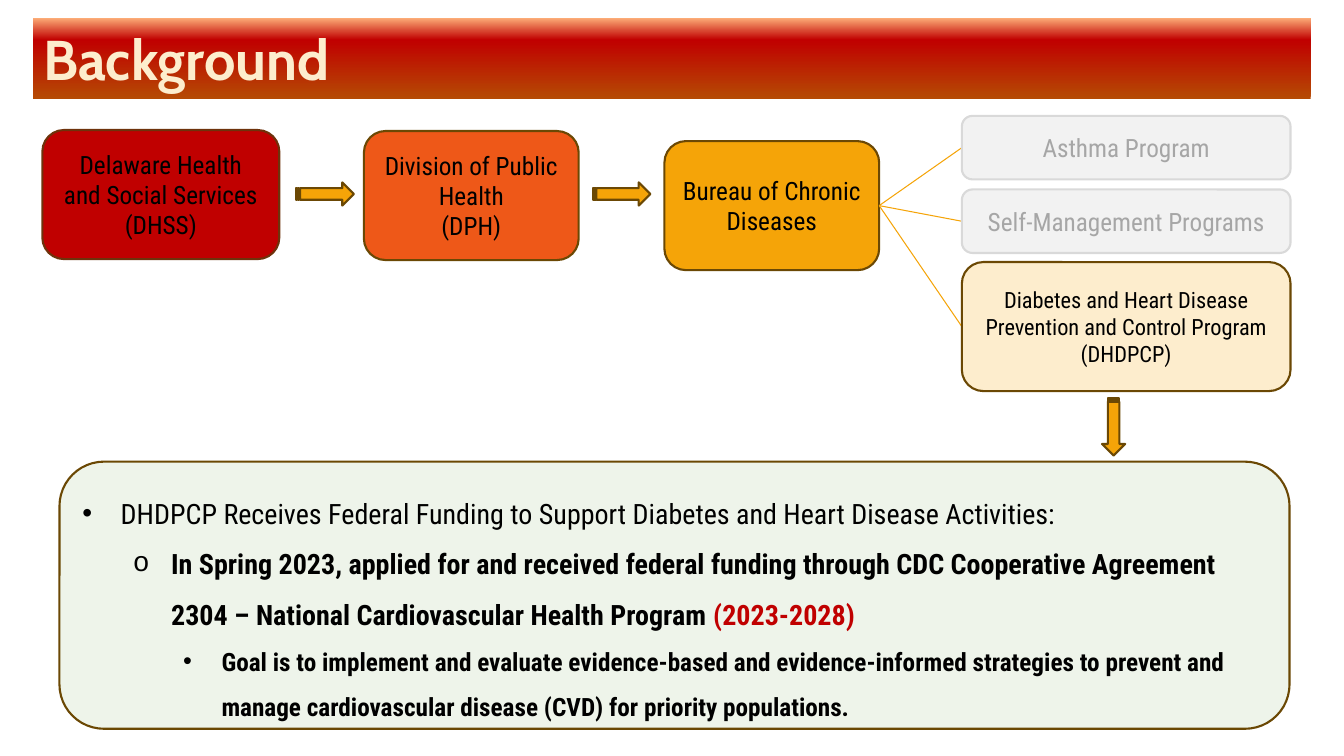
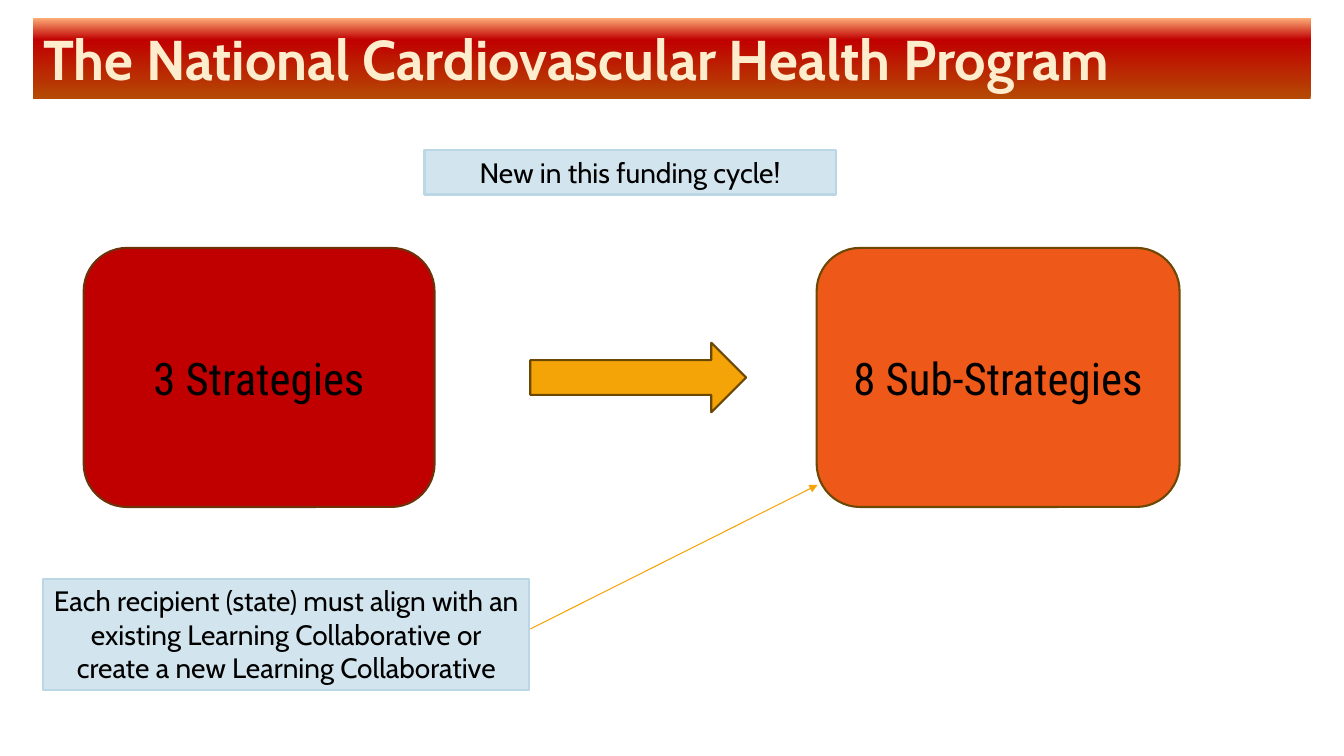
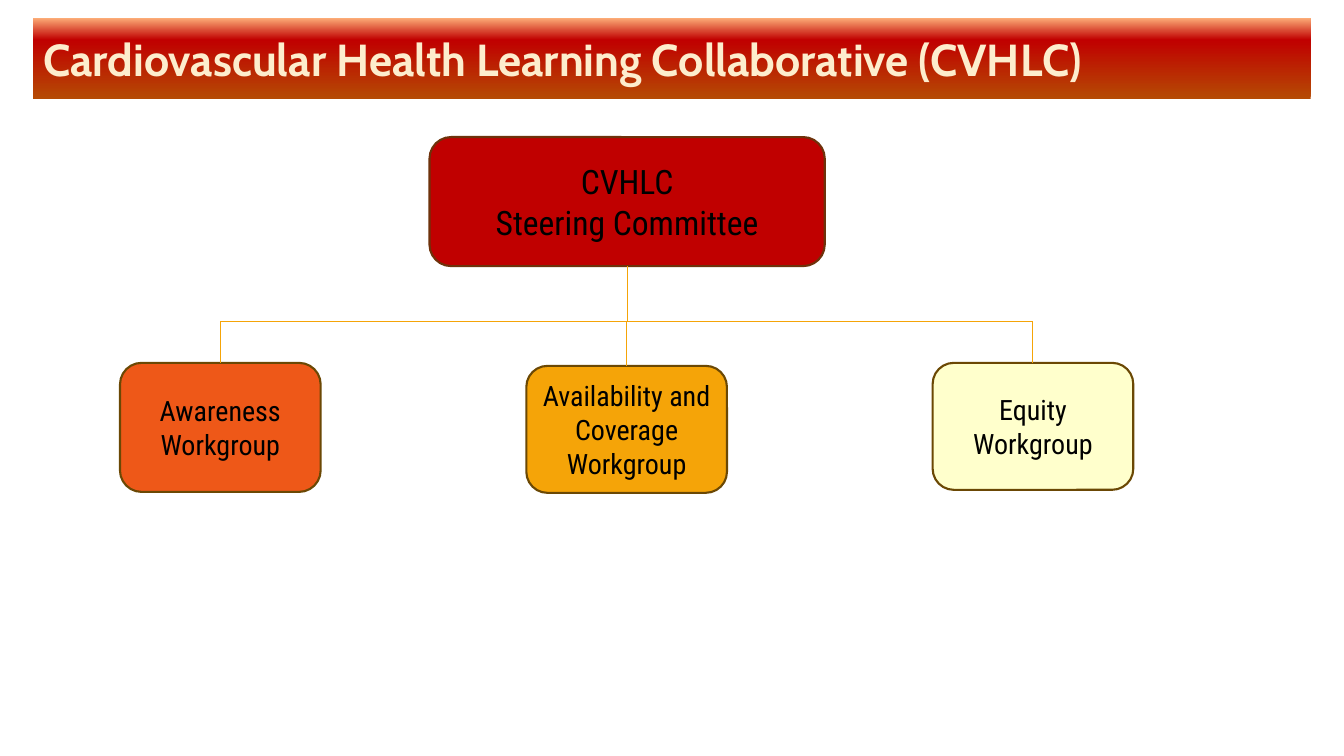
"""Build three slides on a state cardiovascular health program."""
from lxml.etree import SubElement
from pptx import Presentation
from pptx.dml.color import RGBColor
from pptx.enum.shapes import MSO_CONNECTOR, MSO_SHAPE
from pptx.enum.text import MSO_ANCHOR, PP_ALIGN
from pptx.oxml import parse_xml
from pptx.oxml.ns import nsdecls, qn
from pptx.util import Inches, Pt

RED = RGBColor(0xC0, 0x00, 0x00)
ORANGE = RGBColor(0xEE, 0x58, 0x18)
AMBER = RGBColor(0xF5, 0xA4, 0x08)
CREAM = RGBColor(0xFD, 0xED, 0xCD)
YELLOW = RGBColor(0xFF, 0xFF, 0xCC)
SAGE = RGBColor(0xEE, 0xF4, 0xEA)
PALE_BLUE = RGBColor(0xD2, 0xE4, 0xED)
BLUE_EDGE = RGBColor(0xBB, 0xD6, 0xE4)
PALE_GRAY = RGBColor(0xF2, 0xF2, 0xF2)
GRAY_EDGE = RGBColor(0xD9, 0xD9, 0xD9)
GRAY_TEXT = RGBColor(0xA6, 0xA6, 0xA6)
BROWN = RGBColor(0x6B, 0x48, 0x04)
RED_BROWN = RGBColor(0x6E, 0x32, 0x0B)
RUST = RGBColor(0xB5, 0x4A, 0x04)
PEACH = RGBColor(0xFC, 0xAB, 0x76)
BLACK = RGBColor(0x00, 0x00, 0x00)

HEADING_FONT = "Cabin"
BODY_FONT = "Roboto Condensed"
BAND = (0.33, 0.18, 12.67, 0.8)
BAND_STOPS = [(0, RUST), (73, RED), (100, PEACH)]

AGENCIES = [
    (["Delaware Health and Social Services (DHSS)"], (0.42, 1.29, 2.35, 1.28), RED),
    (["Division of Public Health", "(DPH)"], (3.61, 1.3, 2.13, 1.28), ORANGE),
    (["Bureau of Chronic Diseases"], (6.59, 1.4, 2.13, 1.28), AMBER),
]
PROGRAMS = [
    (["Asthma Program"], 1.15, 0.63, False),
    (["Self-Management Programs"], 1.88, 0.63, False),
    (["Diabetes and Heart Disease Prevention and Control Program", "(DHDPCP)"], 2.6, 1.28, True),
]
PROGRAM_LEFT, PROGRAM_WIDTH = 9.54, 3.26
STEP_ARROWS = [(2.94, 1.81, 0), (5.88, 1.81, 0), (10.76, 4.12, 90)]
STEP_ARROW_SIZE = (0.57, 0.23)
FUNDING_BOX = (0.59, 4.58, 12.2, 2.65)
FUNDING = [
    ("•", "Arial", 20, [
        ("DHDPCP Receives Federal Funding to Support Diabetes and Heart Disease Activities:",
         BLACK, False)]),
    ("o", "Courier New", 20, [
        ("In Spring 2023, applied for and received federal funding through CDC Cooperative "
         "Agreement 2304 – National Cardiovascular Health Program ", BLACK, True),
        ("(2023-2028)", RED, True)]),
    ("•", "Arial", 18, [
        ("Goal is to implement and evaluate evidence-based and evidence-informed strategies to "
         "prevent and manage cardiovascular disease (CVD) for priority populations.",
         BLACK, True)]),
]

STRATEGIES = [
    ("3 Strategies", (0.83, 2.46, 3.48, 2.57), RED),
    ("8 Sub-Strategies", (8.1, 2.46, 3.6, 2.57), ORANGE),
]
STRATEGY_ARROW = (5.26, 3.4, 2.14, 0.69)
NOTES = [
    ("New in this funding cycle!", (4.21, 1.49, 4.08, 0.44)),
    ("Each recipient (state) must align with an existing Learning Collaborative "
     "or create a new Learning Collaborative", (0.43, 5.74, 4.82, 1.11)),
]
NOTE_POINTER = ((5.26, 6.24), (8.11, 4.81))

COMMITTEE = (["CVHLC", "Steering Committee"], (4.26, 1.36, 3.92, 1.28))
WORKGROUPS = [
    ("Awareness Workgroup", 3.6, 1.28, ORANGE),
    ("Availability and Coverage Workgroup", 3.63, 1.26, AMBER),
    ("Equity Workgroup", 3.6, 1.26, YELLOW),
]
WORKGROUP_LEFT, WORKGROUP_STEP, WORKGROUP_WIDTH = 1.19, 4.03, 1.99
BRANCH_TOP = 3.19


def add_run(paragraph, text, size, font=BODY_FONT, color=BLACK, bold=False):
    run = paragraph.add_run()
    run.text = text
    run.font.name = font
    run.font.size = Pt(size)
    run.font.bold = bold
    run.font.color.rgb = color


def add_box(slide, kind, box, fill, edge=BROWN):
    shape = slide.shapes.add_shape(kind, *map(Inches, box))
    shape.shadow.inherit = False
    shape.fill.solid()
    shape.fill.fore_color.rgb = fill
    shape.line.color.rgb = edge
    shape.line.width = Pt(1.5)
    shape.text_frame.word_wrap = True
    return shape


def add_label(shape, lines, size, font=BODY_FONT, color=BLACK):
    frame = shape.text_frame
    for index, line in enumerate(lines):
        paragraph = frame.add_paragraph() if index else frame.paragraphs[0]
        paragraph.alignment = PP_ALIGN.CENTER
        add_run(paragraph, line, size, font, color)


def add_node(slide, lines, box, fill, size, edge=None, color=BLACK):
    edge = edge or (RED_BROWN if fill == RED else BROWN)
    add_label(add_box(slide, MSO_SHAPE.ROUNDED_RECTANGLE, box, fill, edge), lines, size, color=color)


def add_line(slide, start, end, arrow=False):
    connector = slide.shapes.add_connector(MSO_CONNECTOR.STRAIGHT, *map(Inches, start + end))
    connector.line.color.rgb = AMBER
    connector.line.width = Pt(0.75)
    if arrow:
        SubElement(connector.line._get_or_add_ln(), qn("a:tailEnd"), type="triangle")
    SubElement(connector._element.spPr, qn("a:effectLst"))


def add_title_band(slide, text, size):
    band = add_box(slide, MSO_SHAPE.RECTANGLE, BAND, RED)
    band.line.fill.background()
    stops = "".join(f'<a:gs pos="{position * 1000}"><a:srgbClr val="{color}"/></a:gs>'
                    for position, color in BAND_STOPS)
    gradient = parse_xml(f'<a:gradFill {nsdecls("a")} rotWithShape="1"><a:gsLst>{stops}</a:gsLst>'
                         '<a:lin ang="16200000" scaled="0"/></a:gradFill>')
    properties = band._element.spPr
    properties.replace(properties.find(qn("a:solidFill")), gradient)
    paragraph = band.text_frame.paragraphs[0]
    paragraph.alignment = PP_ALIGN.LEFT
    add_run(paragraph, text, size, HEADING_FONT, CREAM, True)


def add_funding(slide):
    frame = add_box(slide, MSO_SHAPE.ROUNDED_RECTANGLE, FUNDING_BOX, SAGE).text_frame
    frame.vertical_anchor = MSO_ANCHOR.TOP
    for level, (bullet, bullet_font, size, runs) in enumerate(FUNDING):
        paragraph = frame.add_paragraph() if level else frame.paragraphs[0]
        paragraph.alignment = PP_ALIGN.LEFT
        paragraph.level = level
        paragraph.line_spacing = 1.5
        properties = paragraph._p.get_or_add_pPr()
        properties.set("marL", str(Inches(0.38 + 0.5 * level)))
        properties.set("indent", str(Inches(-0.38)))
        SubElement(properties, qn("a:buFont"), typeface=bullet_font)
        SubElement(properties, qn("a:buChar"), char=bullet)
        for text, color, bold in runs:
            add_run(paragraph, text, size, color=color, bold=bold)


def build_background(slide):
    add_title_band(slide, "Background", 40)
    for lines, box, fill in AGENCIES:
        add_node(slide, lines, box, fill, 18)
    left, top, width, height = AGENCIES[-1][1]
    for lines, program_top, program_height, active in PROGRAMS:
        box = (PROGRAM_LEFT, program_top, PROGRAM_WIDTH, program_height)
        add_line(slide, (left + width, top + height / 2),
                 (PROGRAM_LEFT, program_top + program_height / 2))
        if active:
            add_node(slide, lines, box, CREAM, 16)
        else:
            add_node(slide, lines, box, PALE_GRAY, 18, GRAY_EDGE, GRAY_TEXT)
    for arrow_left, arrow_top, rotation in STEP_ARROWS:
        arrow = add_box(slide, MSO_SHAPE.STRIPED_RIGHT_ARROW,
                        (arrow_left, arrow_top) + STEP_ARROW_SIZE, AMBER)
        arrow.rotation = rotation
    add_funding(slide)


def build_program(slide):
    add_title_band(slide, "The National Cardiovascular Health Program", 40)
    for text, box, fill in STRATEGIES:
        add_node(slide, [text], box, fill, 32)
    add_box(slide, MSO_SHAPE.RIGHT_ARROW, STRATEGY_ARROW, AMBER)
    for text, box in NOTES:
        note = add_box(slide, MSO_SHAPE.RECTANGLE, box, PALE_BLUE, BLUE_EDGE)
        note.text_frame.vertical_anchor = MSO_ANCHOR.TOP
        add_label(note, [text], 20, HEADING_FONT)
    add_line(slide, *NOTE_POINTER, arrow=True)


def build_collaborative(slide):
    add_title_band(slide, "Cardiovascular Health Learning Collaborative (CVHLC)", 32)
    lines, committee_box = COMMITTEE
    add_node(slide, lines, committee_box, RED, 24)
    left, top, width, height = committee_box
    middle = left + width / 2
    add_line(slide, (middle, top + height), (middle, BRANCH_TOP))
    centers = []
    for index, (text, group_top, group_height, fill) in enumerate(WORKGROUPS):
        group_left = WORKGROUP_LEFT + index * WORKGROUP_STEP
        centers.append(group_left + WORKGROUP_WIDTH / 2)
        add_node(slide, [text], (group_left, group_top, WORKGROUP_WIDTH, group_height), fill, 20)
        add_line(slide, (centers[-1], BRANCH_TOP), (centers[-1], group_top))
    add_line(slide, (centers[0], BRANCH_TOP), (centers[-1], BRANCH_TOP))


def main():
    presentation = Presentation()
    presentation.slide_width = Inches(13.33)
    presentation.slide_height = Inches(7.5)
    for build in (build_background, build_program, build_collaborative):
        build(presentation.slides.add_slide(presentation.slide_layouts[6]))
    presentation.save("out.pptx")


if __name__ == "__main__":
    main()
